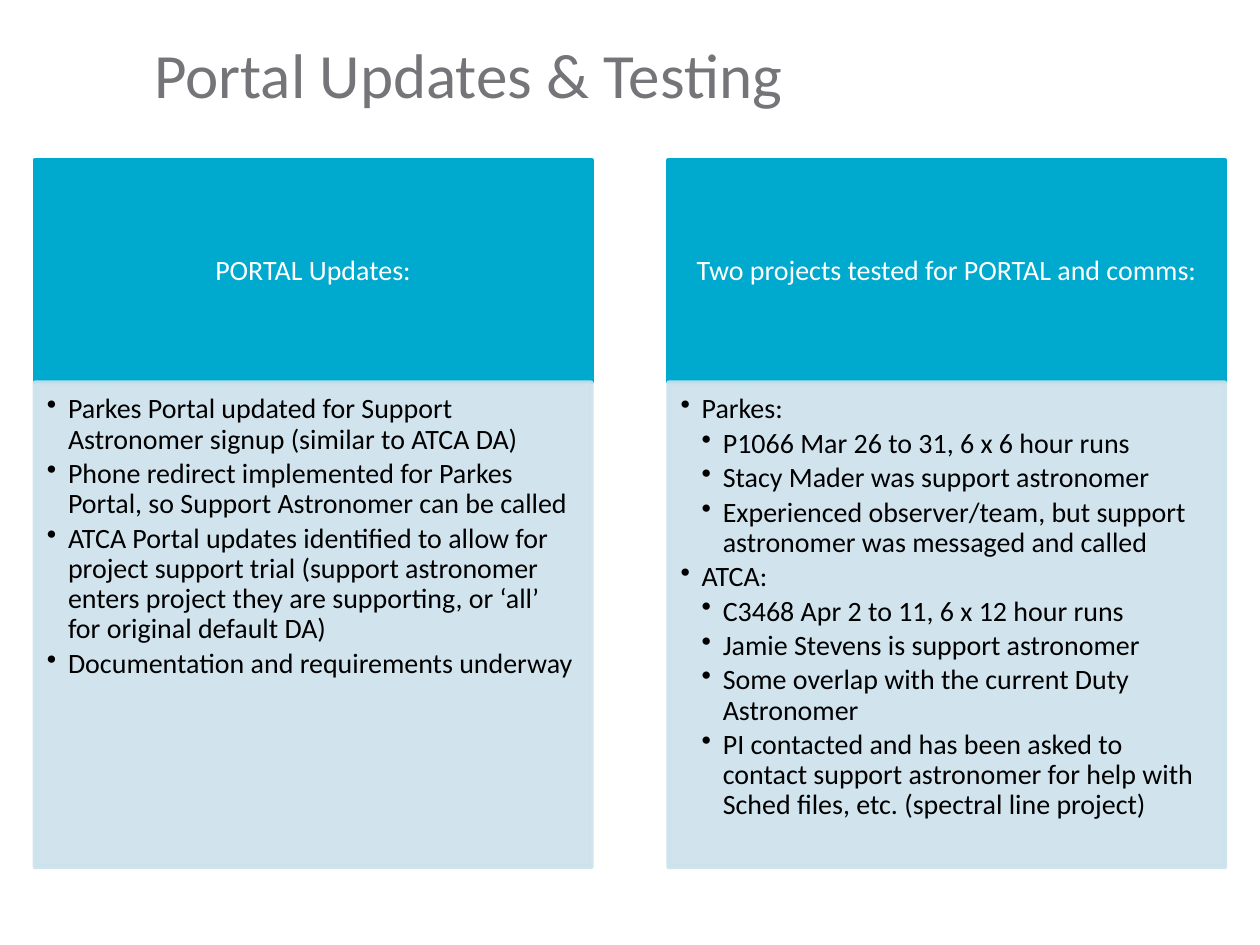
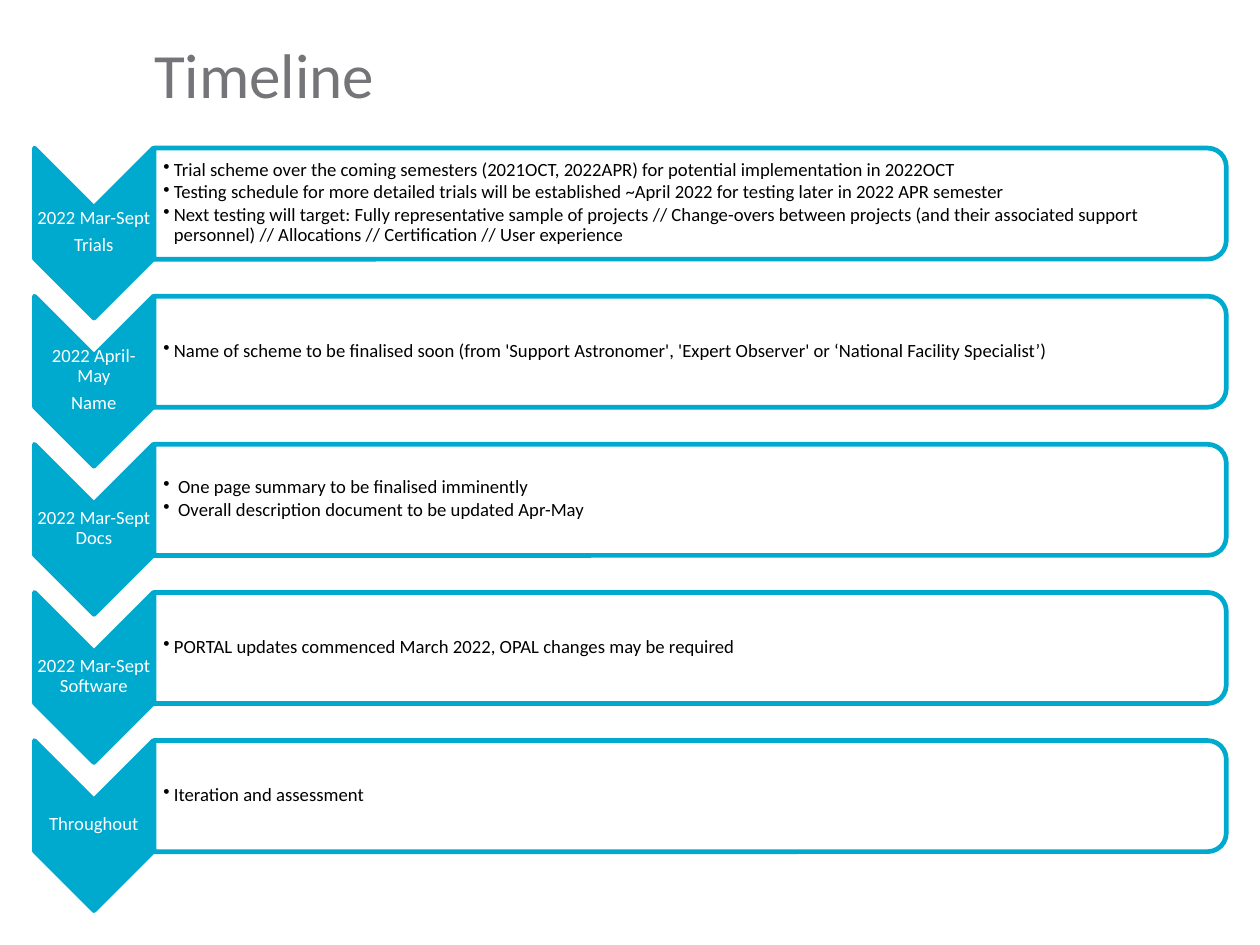
from typing import NamedTuple

from pptx import Presentation
from pptx.dml.color import RGBColor
from pptx.enum.shapes import MSO_SHAPE
from pptx.enum.text import MSO_ANCHOR, MSO_AUTO_SIZE, PP_ALIGN
from pptx.oxml.ns import qn
from pptx.shapes.autoshape import Shape
from pptx.slide import Slide
from pptx.text.text import TextFrame
from pptx.util import Cm, Pt

RECTANGLE = MSO_SHAPE.RECTANGLE
CHEVRON = MSO_SHAPE.CHEVRON
ROUND_TOP = MSO_SHAPE.ROUND_2_SAME_RECTANGLE
TOP, MIDDLE = MSO_ANCHOR.TOP, MSO_ANCHOR.MIDDLE
LEFT, CENTER = PP_ALIGN.LEFT, PP_ALIGN.CENTER

COLOURS = {
    "title": "757579",
    "accent": "00A9CE",
    "pale": "CCE2ED",
    "white": "FFFFFF",
    "black": "000000",
}
FONT = "Calibri"
TITLE_ONLY = 5
OPACITY = "90000"


class Area(NamedTuple):
    """A rectangle in centimetres."""
    left: float
    top: float
    width: float
    height: float

    def moved(self, right: float = 0, down: float = 0) -> "Area":
        return self._replace(left=self.left + right, top=self.top + down)

    def lengths(self) -> list[Cm]:
        return [Cm(value) for value in self]


class Style(NamedTuple):
    """Text look; margins (left, top, right, bottom) and indent are in centimetres."""
    size: float
    colour: str
    margins: tuple[float, float, float, float] = (0, 0, 0, 0)
    anchor: MSO_ANCHOR = MIDDLE
    align: PP_ALIGN = LEFT
    line_spacing: float = 0.9
    gap: float = 0
    indent: float = 0


class Line(NamedTuple):
    text: str
    level: int = 1


class Card(NamedTuple):
    heading: str
    lines: list[Line]


class Stage(NamedTuple):
    label: list[str]
    notes: list[str]


TITLE = Style(27, "title", anchor=TOP, line_spacing=1)
CARD_HEADING = Style(12, "white", (0.23, 0.13, 0.23, 0.13), align=CENTER, gap=0.35)
CARD_BODY = Style(12, "black", (0.18, 0.18, 0.23, 0.25), TOP, gap=0.15, indent=0.32)
STAGE_LABEL = Style(8, "white", (0.02, 0.02, 0.02, 0.02), align=CENTER, gap=0.35)
STAGE_NOTES = Style(8, "black", (0.16, 0.02, 0.02, 0.02), gap=0.15, indent=0.16)

TITLE_AREA = Area(2.33, 0.53, 16, 1.78)
CARD_HEADING_AREA = Area(0.53, 2.42, 8.41, 3.36)
CARD_BODY_AREA = Area(0.53, 5.79, 8.41, 7.32)
CARD_PITCH = 9.58
ARROW_AREA = Area(0.52, 2.24, 1.8, 2.57)
LABEL_AREA = Area(0.52, 3.13, 1.8, 0.76)
PANEL_AREA = Area(2.33, 2.24, 16.21, 1.68)
NOTES_AREA = Area(2.31, 2.32, 16.13, 1.5)
STAGE_PITCH = 2.24

CARDS = [
    Card("PORTAL Updates:", [
        Line("Parkes Portal updated for Support Astronomer signup (similar to ATCA DA)"),
        Line("Phone redirect implemented for Parkes Portal, so Support Astronomer "
             "can be called"),
        Line("ATCA Portal updates identified to allow for project support trial "
             "(support astronomer enters project they are supporting, or ‘all’ "
             "for original default DA)"),
        Line("Documentation and requirements underway"),
    ]),
    Card("Two projects tested for PORTAL and comms:", [
        Line("Parkes:"),
        Line("P1066 Mar 26 to 31, 6 x 6 hour runs", 2),
        Line("Stacy Mader was support astronomer", 2),
        Line("Experienced observer/team, but support astronomer was messaged "
             "and called", 2),
        Line("ATCA:"),
        Line("C3468 Apr 2 to 11, 6 x 12 hour runs", 2),
        Line("Jamie Stevens is support astronomer", 2),
        Line("Some overlap with the current Duty Astronomer", 2),
        Line("PI contacted and has been asked to contact support astronomer for "
             "help with Sched files, etc. (spectral line project)", 2),
    ]),
]

STAGES = [
    Stage(["2022 Mar-Sept", "Trials"], [
        "Trial scheme over the coming semesters (2021OCT, 2022APR) for potential "
        "implementation in 2022OCT",
        "Testing schedule for more detailed trials will be established ~April 2022 "
        "for testing later in 2022 APR semester",
        "Next testing will target: Fully representative sample of projects // "
        "Change-overs between projects (and their associated support personnel) // "
        "Allocations // Certification // User experience",
    ]),
    Stage(["2022 April-May", "Name"], [
        "Name of scheme to be finalised soon (from 'Support Astronomer', "
        "'Expert Observer' or ‘National Facility Specialist’)",
    ]),
    Stage(["2022 Mar-Sept Docs"], [
        " One page summary to be finalised imminently",
        " Overall description document to be updated Apr-May",
    ]),
    Stage(["2022 Mar-Sept Software"], [
        "PORTAL updates commenced March 2022, OPAL changes may be required",
    ]),
    Stage(["Throughout"], ["Iteration and assessment"]),
]


def rgb(name: str) -> RGBColor:
    return RGBColor.from_string(COLOURS[name])


def set_all(target: object, values: dict[str, object]) -> None:
    for name, value in values.items():
        setattr(target, name, value)


def write(frame: TextFrame, lines: list[Line], style: Style) -> None:
    """Fill a text frame; a style with an indent gets bullets."""
    left, top, right, bottom = (Cm(value) for value in style.margins)
    set_all(frame, {
        "word_wrap": True, "auto_size": MSO_AUTO_SIZE.NONE,
        "vertical_anchor": style.anchor, "margin_left": left, "margin_top": top,
        "margin_right": right, "margin_bottom": bottom,
    })
    for index, line in enumerate(lines):
        para = frame.add_paragraph() if index else frame.paragraphs[0]
        set_all(para, {
            "alignment": style.align, "line_spacing": style.line_spacing,
            "space_before": Pt(0), "space_after": Pt(style.size * style.gap),
        })
        if style.indent:
            properties = para._p.get_or_add_pPr()
            properties.set("marL", str(Cm(style.indent * line.level)))
            properties.set("indent", str(-Cm(style.indent)))
            bullet = properties.makeelement(qn("a:buChar"), {"char": "•"})
            properties.append(bullet)
        span = para.add_run()
        span.text = line.text
        set_all(span.font, {"name": FONT, "size": Pt(style.size), "bold": False})
        span.font.color.rgb = rgb(style.colour)


def add_block(slide: Slide, kind: MSO_SHAPE, area: Area, fill: str, line: str,
              translucent: bool = False) -> Shape:
    block = slide.shapes.add_shape(kind, *area.lengths())
    block.shadow.inherit = False
    block.fill.solid()
    block.fill.fore_color.rgb = rgb(fill)
    block.line.color.rgb = rgb(line)
    block.line.width = Pt(2)
    if translucent:
        for colour in block._element.spPr.iter(qn("a:srgbClr")):
            if colour.get("val") == COLOURS[fill]:
                colour.append(colour.makeelement(qn("a:alpha"), {"val": OPACITY}))
    return block


def add_turned_block(slide: Slide, kind: MSO_SHAPE, area: Area, fill: str,
                     translucent: bool = False) -> None:
    """Draw a block turned clockwise by a quarter so that it covers the area."""
    shift = (area.width - area.height) / 2
    upright = Area(area.left + shift, area.top - shift, area.height, area.width)
    add_block(slide, kind, upright, fill, "accent", translucent).rotation = 90


def add_text(slide: Slide, area: Area, texts: list[str], style: Style) -> None:
    box = slide.shapes.add_textbox(*area.lengths())
    write(box.text_frame, [Line(text) for text in texts], style)


def add_page(deck: Presentation, title: str) -> Slide:
    page = deck.slides.add_slide(deck.slide_layouts[TITLE_ONLY])
    heading = page.shapes.title
    set_all(heading, dict(zip(Area._fields, TITLE_AREA.lengths())))
    write(heading.text_frame, [Line(title)], TITLE)
    return page


def add_card(slide: Slide, card: Card, right: float) -> None:
    head = add_block(slide, RECTANGLE, CARD_HEADING_AREA.moved(right),
                     "accent", "accent")
    write(head.text_frame, [Line(card.heading)], CARD_HEADING)
    body = add_block(slide, RECTANGLE, CARD_BODY_AREA.moved(right),
                     "pale", "pale", translucent=True)
    write(body.text_frame, card.lines, CARD_BODY)


def add_stage(slide: Slide, stage: Stage, down: float) -> None:
    add_turned_block(slide, CHEVRON, ARROW_AREA.moved(down=down), "accent")
    add_text(slide, LABEL_AREA.moved(down=down), stage.label, STAGE_LABEL)
    add_turned_block(slide, ROUND_TOP, PANEL_AREA.moved(down=down), "white",
                     translucent=True)
    add_text(slide, NOTES_AREA.moved(down=down), stage.notes, STAGE_NOTES)


def main() -> None:
    deck = Presentation()
    set_all(deck, {"slide_width": Cm(19.05), "slide_height": Cm(14.29)})

    updates = add_page(deck, "Portal Updates & Testing")
    for index, card in enumerate(CARDS):
        add_card(updates, card, index * CARD_PITCH)

    timeline = add_page(deck, "Timeline")
    for index, stage in enumerate(STAGES):
        add_stage(timeline, stage, index * STAGE_PITCH)

    deck.save("out.pptx")


if __name__ == "__main__":
    main()
